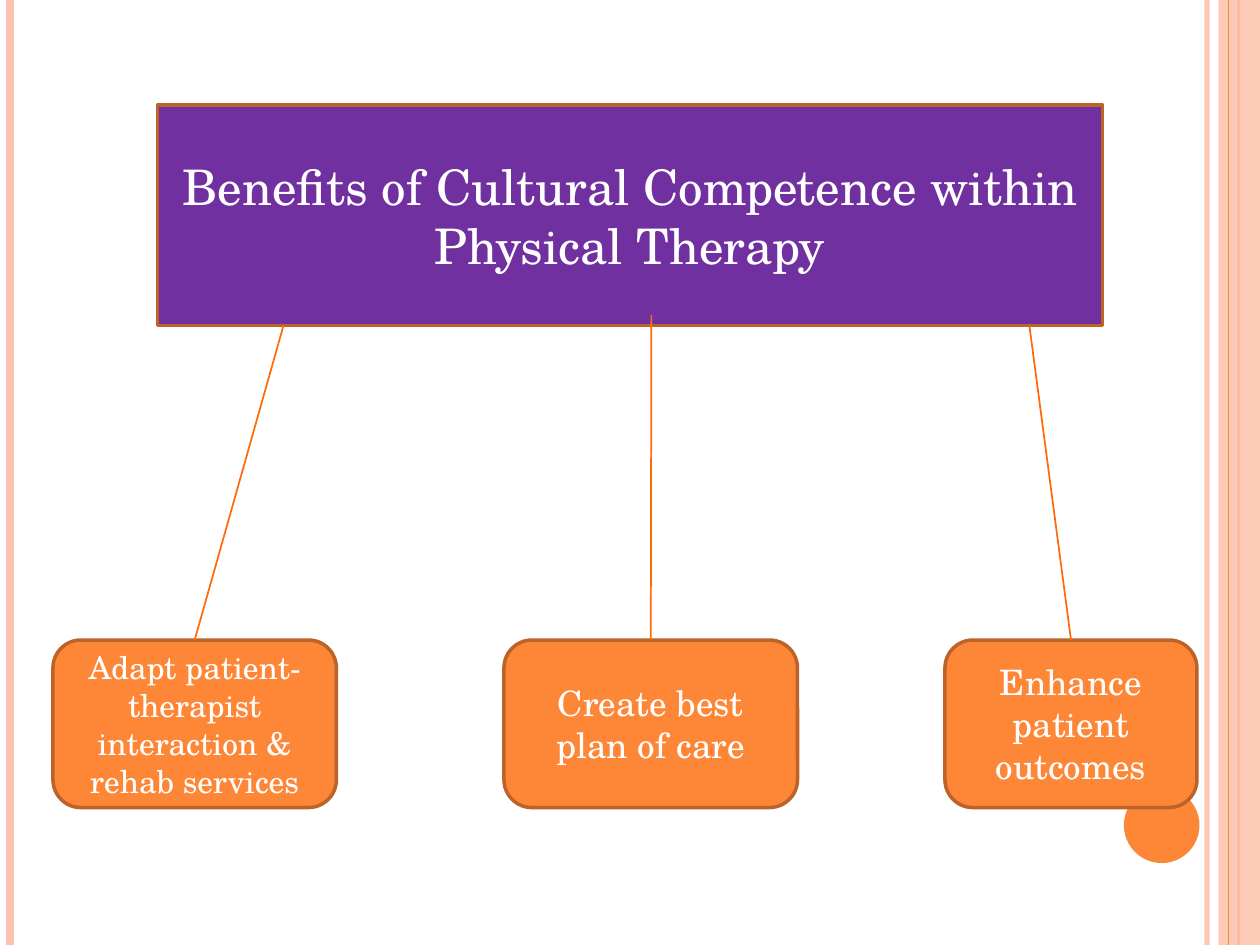
from dataclasses import dataclass

from lxml import etree
from pptx import Presentation
from pptx.dml.color import RGBColor
from pptx.enum.shapes import MSO_CONNECTOR, MSO_SHAPE
from pptx.enum.text import MSO_ANCHOR, MSO_AUTO_SIZE, PP_ALIGN
from pptx.oxml.ns import qn
from pptx.util import Inches, Pt

LINE = MSO_CONNECTOR.STRAIGHT
ROUND, RECT, OVAL = MSO_SHAPE.ROUNDED_RECTANGLE, MSO_SHAPE.RECTANGLE, MSO_SHAPE.OVAL
MIDDLE, CENTER = MSO_ANCHOR.MIDDLE, PP_ALIGN.CENTER
TITLE_ONLY = 5
TOP = 0


@dataclass(frozen=True)
class Theme:
    font: str = "TeX Gyre Schola"
    text: str = "FFFFFF"
    head: str = "7030A0"
    box: str = "FE8637"
    edge: str = "BC6329"
    link: str = "FF6B0A"
    pale: str = "FEC3AE"
    head_size: int = 28
    edge_width: float = 2
    link_width: float = 1


T = Theme()
WIDE, HIGH = 10, 7.5

HEAD = "Benefits of Cultural Competence within Physical Therapy"
HEAD_AT = (WIDE / 8, HIGH / 9, WIDE * 3 / 4, 1.75)
HEAD_FOOT = HEAD_AT[1] + HEAD_AT[3]

# text, type size, left, width, start of its link
BENEFITS = [
    ("Adapt patient-therapist interaction & rehab services", 18, 0.42, 2.25, (2.25, HEAD_FOOT)),
    ("Create best plan of care", 20, 4, 2.33, (5.17, 2.5)),
    ("Enhance patient outcomes", 20, 7.5, 2, (8.17, HEAD_FOOT)),
]
ROW_TOP, ROW_HIGH = 5.08, 1.33

# x, colour, width, opacity in percent
BACK_RULES = [(9.58, T.pale, 3, 93), (0.08, T.pale, 4.5, 100), (9.83, T.box, 1.5, 100)]
FRONT_RULE = (9.75, T.box, 0.75, 100)
BAND = (WIDE - 0.33, 0, 0.33, HIGH)
DOT = (8.92, 6.25, 0.6, 0.6)


def fade(part, share):
    """Set the opacity of a solid fill or line, in percent."""
    color = next(part.iter(qn("a:srgbClr")))
    etree.SubElement(color, qn("a:alpha")).set("val", str(share * 1000))


def add_line(slide, start, end, color, width):
    line = slide.shapes.add_connector(LINE, *map(Inches, start + end))
    line.line.color.rgb = RGBColor.from_string(color)
    line.line.width = Pt(width)
    etree.SubElement(line._element.spPr, qn("a:effectLst"))
    return line


def add_rule(slide, x, color, width, share):
    rule = add_line(slide, (x, 0), (x, HIGH), color, width)
    if share < 100:
        fade(rule._element.spPr, share)


def paint(shape, fill, edge=None):
    shape.fill.solid()
    shape.fill.fore_color.rgb = RGBColor.from_string(fill)
    if edge:
        shape.line.color.rgb = RGBColor.from_string(edge)
        shape.line.width = Pt(T.edge_width)
    else:
        shape.line.fill.background()


def add_shape(slide, kind, at, fill, edge=None):
    shape = slide.shapes.add_shape(kind, *map(Inches, at))
    shape.shadow.inherit = False
    paint(shape, fill, edge)
    return shape


def write(shape, text, size):
    frame = shape.text_frame
    frame.word_wrap = True
    frame.auto_size = MSO_AUTO_SIZE.NONE
    frame.vertical_anchor = MIDDLE
    para = frame.paragraphs[0]
    para.alignment = CENTER
    run = para.add_run()
    run.text = text
    run.font.name = T.font
    run.font.size = Pt(size)
    run.font.color.rgb = RGBColor.from_string(T.text)


def add_decor(slide):
    for rule in BACK_RULES:
        add_rule(slide, *rule)
    band = add_shape(slide, RECT, BAND, T.pale)
    fade(band._element.spPr, 87)
    add_rule(slide, *FRONT_RULE)
    add_shape(slide, OVAL, DOT, T.box)


def add_head(slide):
    """Turn the title placeholder into a rounded box."""
    head = slide.shapes.title
    head.left, head.top, head.width, head.height = map(Inches, HEAD_AT)
    outline = etree.SubElement(head._element.spPr, qn("a:prstGeom"), prst="roundRect")
    etree.SubElement(outline, qn("a:avLst"))
    paint(head, T.head, T.edge)
    write(head, HEAD, T.head_size)


def add_benefits(slide):
    boxes = []
    for text, size, left, width, start in BENEFITS:
        box = add_shape(slide, ROUND, (left, ROW_TOP, width, ROW_HIGH), T.box, T.edge)
        write(box, text, size)
        boxes.append((box, start))
    for box, start in boxes:
        link = add_line(slide, start, (start[0], ROW_TOP), T.link, T.link_width)
        link.end_connect(box, TOP)


def main():
    deck = Presentation()
    deck.slide_width, deck.slide_height = Inches(WIDE), Inches(HIGH)
    slide = deck.slides.add_slide(deck.slide_layouts[TITLE_ONLY])
    add_decor(slide)
    add_head(slide)
    add_benefits(slide)
    deck.save("out.pptx")


if __name__ == "__main__":
    main()
